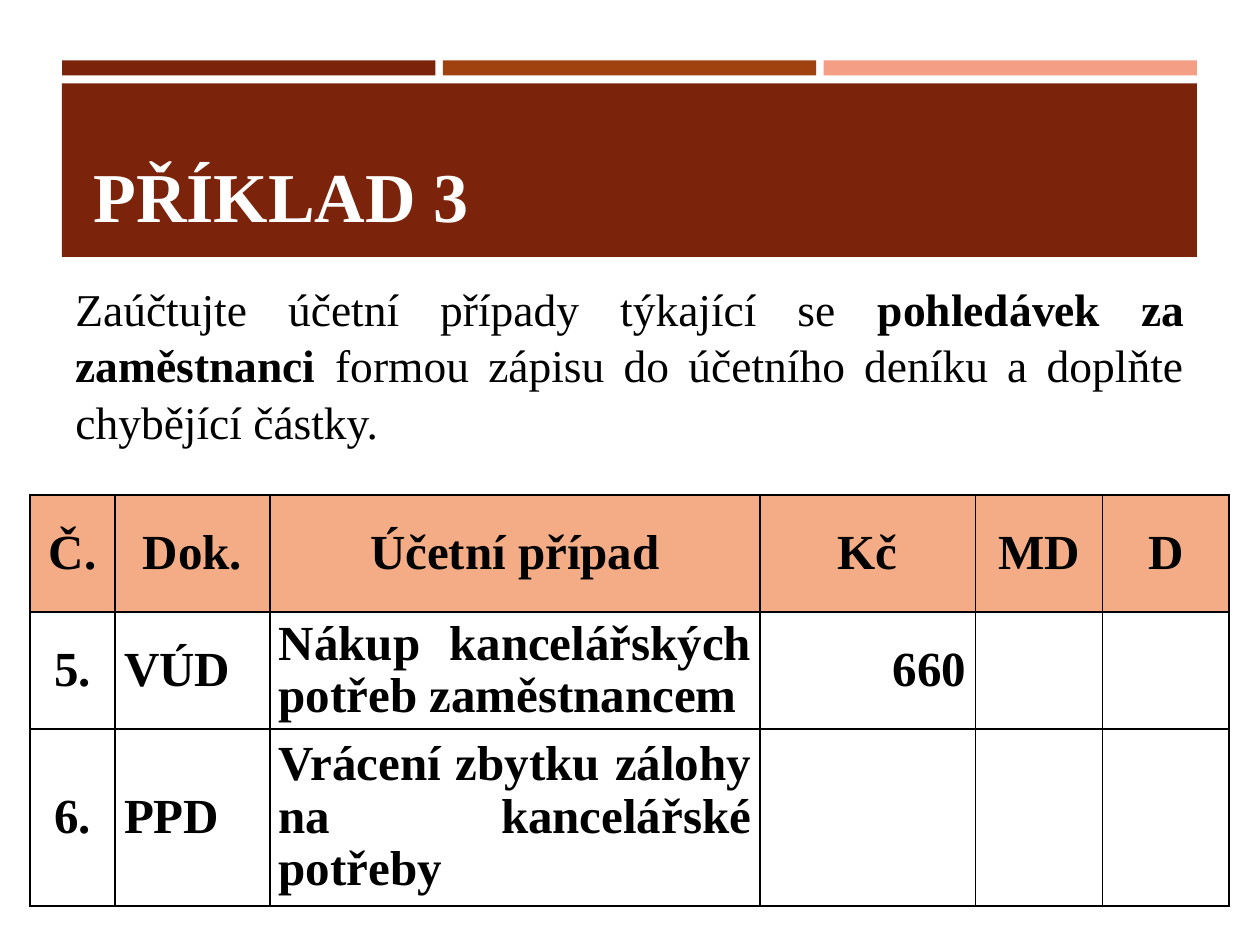
from lxml import etree
from pptx import Presentation
from pptx import util as u
from pptx.dml.color import RGBColor
from pptx.enum import shapes, text
from pptx.oxml import ns

# Content
TITLE = "PŘÍKLAD 3"
TASK = [
    ("Zaúčtujte účetní případy týkající se ", False),
    ("pohledávek za zaměstnanci ", True),
    ("formou zápisu do účetního deníku a doplňte chybějící částky.", False),
]
HEADER = ["Č.", "Dok.", "Účetní případ", "Kč", "MD", "D"]
ENTRIES = [
    ["5.", "VÚD", "Nákup kancelářských potřeb zaměstnancem", "660", "", ""],
    ["6.", "PPD", "Vrácení zbytku zálohy na kancelářské potřeby", "", "", ""],
]
COLUMN_WIDTHS = [1.72, 3.12, 9.88, 4.34, 2.56, 2.56]
ROW_HEIGHTS = [2.36, 2.36, 3.56]

# Style
FONT = "Times New Roman"
BLACK = RGBColor(0x00, 0x00, 0x00)
WHITE = RGBColor(0xFF, 0xFF, 0xFF)
MAROON = RGBColor(0x7B, 0x23, 0x0B)
BROWN = RGBColor(0x9F, 0x42, 0x10)
SALMON = RGBColor(0xF4, 0x9E, 0x86)
PEACH = RGBColor(0xF3, 0xAC, 0x85)
LEFT, CENTER = text.PP_ALIGN.LEFT, text.PP_ALIGN.CENTER
RIGHT, JUSTIFY = text.PP_ALIGN.RIGHT, text.PP_ALIGN.JUSTIFY
COLUMN_ALIGNS = [CENTER, LEFT, JUSTIFY, RIGHT, CENTER, CENTER]

# Layout in centimetres
BAND_LEFT, BAND_WIDTH, BAR_GAP = 1.25, 22.88, 0.15


def write(frame, runs, size, color=BLACK, align=LEFT, spacing=None):
    """Fill the first paragraph with (text, bold) runs."""
    paragraph = frame.paragraphs[0]
    paragraph.alignment = align
    if spacing:
        paragraph.line_spacing = spacing
    for words, bold in runs:
        run = paragraph.add_run()
        run.text = words
        run.font.name = FONT
        run.font.size = u.Pt(size)
        run.font.bold = bold
        run.font.color.rgb = color


def add_block(slide, left, top, width, height, color):
    shape = slide.shapes.add_shape(
        shapes.MSO_SHAPE.RECTANGLE, u.Cm(left), u.Cm(top), u.Cm(width), u.Cm(height))
    shape.shadow.inherit = False
    shape.fill.solid()
    shape.fill.fore_color.rgb = color
    shape.line.fill.background()


def add_borders(cell):
    properties = cell._tc.get_or_add_tcPr()
    for index, side in enumerate(("lnL", "lnR", "lnT", "lnB")):
        line = etree.Element(ns.qn(f"a:{side}"), w=str(u.Pt(1)))
        fill = etree.SubElement(line, ns.qn("a:solidFill"))
        etree.SubElement(fill, ns.qn("a:srgbClr"), val=str(BLACK))
        properties.insert(index, line)


def add_journal(slide):
    rows = [HEADER] + ENTRIES
    table = slide.shapes.add_table(
        len(rows), len(HEADER), u.Cm(0.6), u.Cm(9.98),
        u.Cm(sum(COLUMN_WIDTHS)), u.Cm(sum(ROW_HEIGHTS))).table
    table.first_row = table.horz_banding = False
    for column, width in zip(table.columns, COLUMN_WIDTHS):
        column.width = u.Cm(width)
    for r, (values, height) in enumerate(zip(rows, ROW_HEIGHTS)):
        table.rows[r].height = u.Cm(height)
        for c, value in enumerate(values):
            cell = table.cell(r, c)
            cell.vertical_anchor = text.MSO_ANCHOR.MIDDLE
            cell.margin_left = cell.margin_right = u.Cm(0.18)
            cell.margin_top = cell.margin_bottom = 0
            if r == 0:
                cell.fill.solid()
                cell.fill.fore_color.rgb = PEACH
            else:
                cell.fill.background()
            if value:
                write(cell.text_frame, [(value, True)], 28, spacing=0.97,
                      align=COLUMN_ALIGNS[c] if r else CENTER)
            add_borders(cell)


def main():
    presentation = Presentation()
    presentation.slide_width, presentation.slide_height = u.Cm(25.4), u.Cm(19.05)
    slide = presentation.slides.add_slide(presentation.slide_layouts[5])

    # Coloured bars and title band
    colors = [MAROON, BROWN, SALMON]
    bar_width = (BAND_WIDTH - BAR_GAP * (len(colors) - 1)) / len(colors)
    for i, color in enumerate(colors):
        add_block(slide, BAND_LEFT + i * (bar_width + BAR_GAP), 1.22, bar_width, 0.3, color)
    add_block(slide, BAND_LEFT, 1.68, BAND_WIDTH, 3.5, MAROON)

    # Title, raised above the band
    title = slide.shapes.title
    title.left, title.top = u.Cm(1.63), u.Cm(1.9)
    title.width, title.height = u.Cm(22.2), u.Cm(3)
    title.text_frame.vertical_anchor = text.MSO_ANCHOR.BOTTOM
    write(title.text_frame, [(TITLE, True)], 40, color=WHITE)
    slide.shapes.element.append(title.element)

    # Task
    task = slide.shapes.add_textbox(u.Cm(1.27), u.Cm(5.49), u.Cm(22.86), u.Cm(3.58))
    task.text_frame.word_wrap = True
    write(task.text_frame, TASK, 26, align=JUSTIFY, spacing=1.04)

    add_journal(slide)
    presentation.save("out.pptx")


if __name__ == "__main__":
    main()
